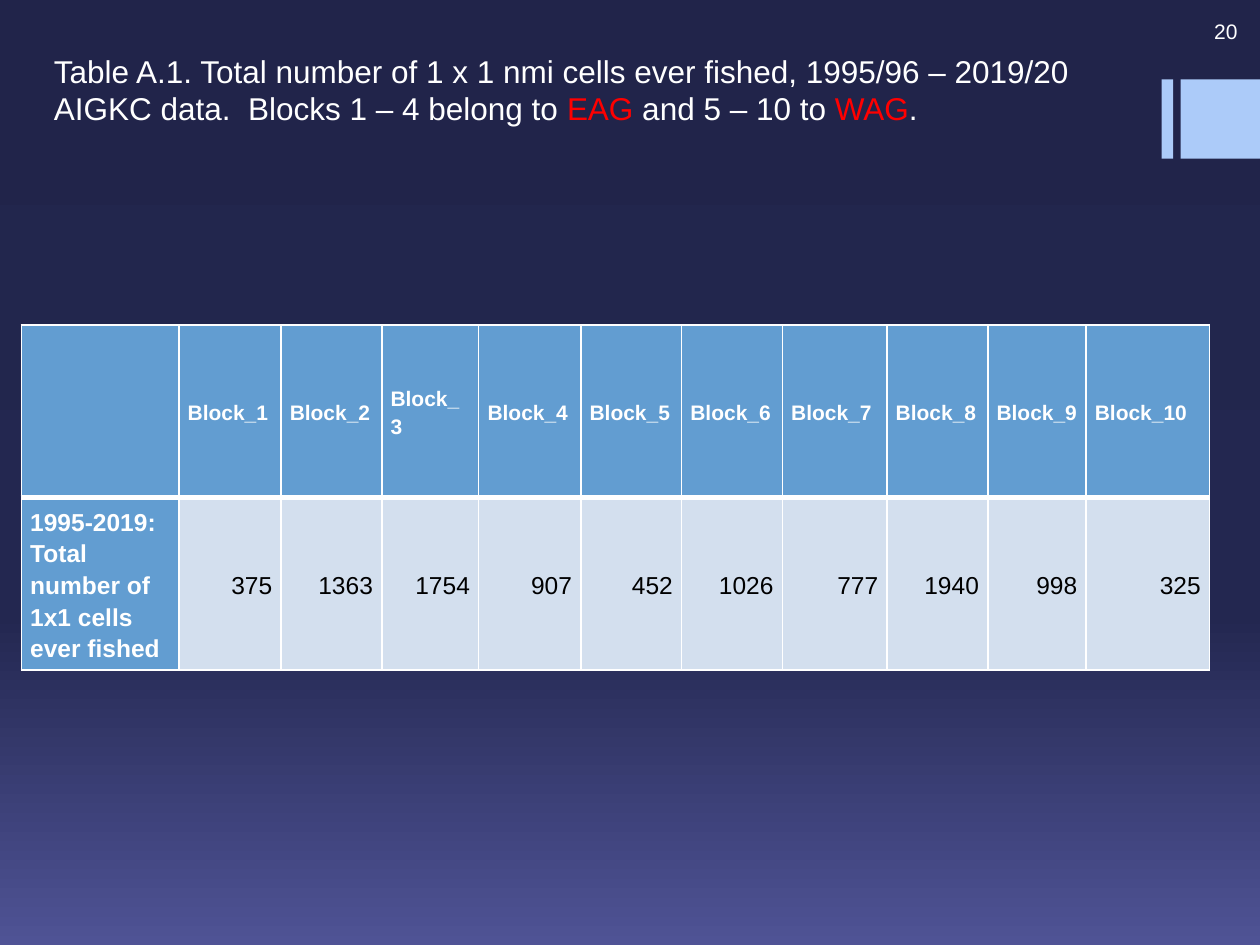
from copy import deepcopy

from lxml import etree
from pptx import Presentation
from pptx import util as u
from pptx.dml.color import RGBColor
from pptx.enum import shapes, text
from pptx.oxml.ns import qn

C = {"top": "21244A", "mid": "232750", "bottom": "4F5395", "bar": "ACCBF9",
     "white": "FFFFFF", "red": "FF0000", "black": "000000",
     "head": "629DD1", "body": "D3DFEE"}


def add_run(p, txt, size, color, bold=False):
    r = p.add_run()
    r.text = txt
    for name, value in {"name": "Arial", "size": u.Pt(size), "bold": bold}.items():
        setattr(r.font, name, value)
    r.font.color.rgb = RGBColor.from_string(C[color])


def add_borders(cell, widths):
    tcPr = cell._tc.get_or_add_tcPr()
    for i, (side, pt) in enumerate(widths.items()):
        ln = etree.Element(qn("a:ln" + side), w=str(u.Pt(pt)))
        fill = etree.SubElement(ln, qn("a:solidFill"))
        etree.SubElement(fill, qn("a:srgbClr"), val=C["white"])
        tcPr.insert(i, ln)


prs = Presentation()
prs.slide_width, prs.slide_height = u.Inches(10), u.Inches(7.5)
s = prs.slides.add_slide(prs.slide_layouts[6])

# Background gradient, top to bottom
bg = s.background.fill
bg.gradient()
bg.gradient_angle = 270
gs = s.element.find(".//" + qn("a:gsLst"))
gs.append(deepcopy(gs[0]))
for stop, (pos, color) in zip(bg.gradient_stops,
                              [(0, "top"), (0.65, "mid"), (1, "bottom")]):
    stop.position = pos
    stop.color.rgb = RGBColor.from_string(C[color])

# Bars at the right edge
for left, width in [(9.22, 0.09), (9.37, 0.63)]:
    sp = s.shapes.add_shape(shapes.MSO_SHAPE.RECTANGLE, u.Inches(left),
                            u.Inches(0.63), u.Inches(width), u.Inches(0.63))
    sp.shadow.inherit = False
    sp.fill.solid()
    sp.fill.fore_color.rgb = RGBColor.from_string(C["bar"])
    sp.line.fill.background()

# Slide number and title
boxes = [
    ((8.89, 0.08, 1.03, 0.33), 12, text.MSO_ANCHOR.MIDDLE, text.PP_ALIGN.RIGHT,
     [("20", "white")]),
    ((0.33, 0.36, 8.75, 1.01), 18, text.MSO_ANCHOR.TOP, text.PP_ALIGN.LEFT,
     [("Table A.1. Total number of 1 x 1 nmi cells ever fished, 1995/96 – 2019/20 "
       "AIGKC data.  Blocks 1 – 4 belong to ", "white"),
      ("EAG", "red"), (" and 5 – 10 to ", "white"), ("WAG", "red"), (".", "white")]),
]
for at, size, anchor, align, runs in boxes:
    tf = s.shapes.add_textbox(*map(u.Inches, at)).text_frame
    tf.word_wrap = True
    tf.vertical_anchor = anchor
    p = tf.paragraphs[0]
    p.alignment = align
    for txt, color in runs:
        add_run(p, txt, size, color)

# Table of cells fished per block
rows = [
    [""] + [f"Block_{n}" for n in range(1, 11)],
    ["1995-2019: Total number of 1x1 cells ever fished",
     375, 1363, 1754, 907, 452, 1026, 777, 1940, 998, 325],
]
widths = [1.25, 0.81, 0.8, 0.77, 0.81, 0.8, 0.8, 0.83, 0.8, 0.78, 0.98]
table = s.shapes.add_table(2, 11, u.Inches(0.17), u.Inches(2.58),
                           u.Inches(9.42), u.Inches(2.75)).table
for col, width in zip(table.columns, widths):
    col.width = u.Inches(width)
margins = {"margin_left": 0.07, "margin_right": 0.07,
           "margin_top": 0, "margin_bottom": 0}
for i, row in enumerate(rows):
    table.rows[i].height = u.Inches(1.37)
    for j, value in enumerate(row):
        cell = table.cell(i, j)
        is_value = i == 1 and j > 0
        cell.vertical_anchor = text.MSO_ANCHOR.MIDDLE
        for name, inches in margins.items():
            setattr(cell, name, u.Inches(inches))
        cell.fill.solid()
        cell.fill.fore_color.rgb = RGBColor.from_string(
            C["body" if is_value else "head"])
        # Thick rule between the two rows
        add_borders(cell, {"L": 1, "R": 1, "T": 3 if i else 1, "B": 1 if i else 3})
        if value == "":
            continue
        p = cell.text_frame.paragraphs[0]
        p.line_spacing = 1.15
        p.alignment = text.PP_ALIGN.RIGHT if is_value else text.PP_ALIGN.LEFT
        add_run(p, str(value), 14 if i else 12,
                "black" if is_value else "white", bold=not is_value)

prs.save("out.pptx")
